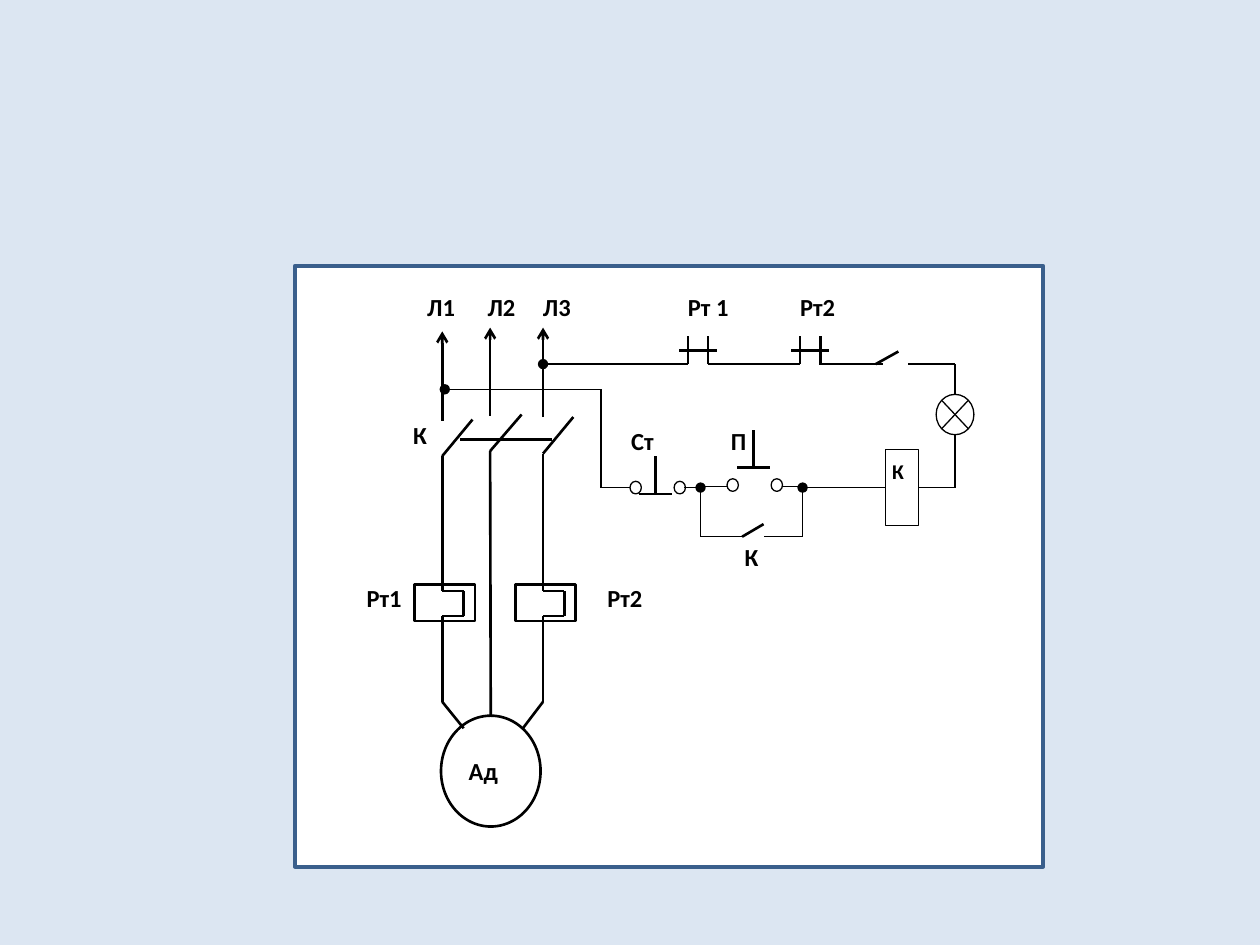
from lxml import etree
from pptx import Presentation
from pptx.dml.color import RGBColor
from pptx.enum.shapes import MSO_CONNECTOR, MSO_SHAPE
from pptx.enum.text import MSO_ANCHOR
from pptx.oxml.ns import qn
from pptx.util import Inches, Pt

STRAIGHT = MSO_CONNECTOR.STRAIGHT
RECT, OVAL = MSO_SHAPE.RECTANGLE, MSO_SHAPE.OVAL
LAMP = MSO_SHAPE.FLOWCHART_SUMMING_JUNCTION
TOP = MSO_ANCHOR.TOP
BLACK, WHITE, FRAME, BACKGROUND = "000000", "FFFFFF", "3A5F8C", "DCE6F2"
THIN, THICK = 0.75, 1.5


def color(value):
    return RGBColor.from_string(value)


def write(frame, text, size=14, bold=True, font="Calibri", ink=BLACK):
    paragraph = frame.paragraphs[0]
    paragraph.space_after = Pt(10)
    run = paragraph.add_run()
    run.text = text
    run.font.name, run.font.size, run.font.bold = font, Pt(size), bold
    run.font.color.rgb = color(ink)


class Schematic:
    def __init__(self, slide):
        self.slide = slide
        self.shapes = slide.shapes
        slide.background.fill.solid()
        slide.background.fill.fore_color.rgb = color(BACKGROUND)

    def block(self, kind, left, top, width, height, weight=THIN, ink=BLACK):
        shape = self.shapes.add_shape(
            kind, Inches(left), Inches(top), Inches(width), Inches(height))
        shape.shadow.inherit = False
        shape.fill.solid()
        shape.fill.fore_color.rgb = color(WHITE)
        shape.line.color.rgb = color(ink)
        shape.line.width = Pt(weight)
        return shape

    def line(self, start, end, weight=THIN, head=None, tail=None, end_at=None):
        """Draw from start to end; end_at is a (shape, site) to join."""
        line = self.shapes.add_connector(
            STRAIGHT, *(Inches(value) for value in (*start, *end)))
        if end_at:
            line.end_connect(*end_at)
        line.line.color.rgb = color(BLACK)
        line.line.width = Pt(weight)
        outline = line._element.spPr.find(qn("a:ln"))
        for tag, kind in (("a:headEnd", head), ("a:tailEnd", tail)):
            if kind:
                etree.SubElement(outline, qn(tag), type=kind)
        etree.SubElement(line._element.spPr, qn("a:effectLst"))

    def route(self, *points, weight=THIN):
        for start, end in zip(points, points[1:]):
            self.line(start, end, weight)

    def label(self, text, left, top, width=0.5, size=14):
        frame = self.shapes.add_textbox(
            Inches(left), Inches(top), Inches(width), Inches(0.3)).text_frame
        frame.word_wrap = True
        frame.vertical_anchor = TOP
        frame.margin_left = frame.margin_right = 0
        frame.margin_top = frame.margin_bottom = 0
        write(frame, text, size=size)

    def power_contact(self, x, arrow_y, gap_y, pivot_y, blade):
        self.line((x, gap_y), (x, arrow_y), THICK, tail="arrow")
        self.line((x, pivot_y), (x + blade, pivot_y - 0.29), THICK)

    def heater(self, x, pivot_y):
        """Thermal relay heater in one phase of the motor supply."""
        self.block(RECT, x - 0.22, 4.64, 0.48, 0.29, THICK)
        self.route((x, pivot_y), (x, 4.69), (x + 0.17, 4.69),
                   (x + 0.17, 4.89), (x, 4.89), (x, 5.57), weight=THICK)

    def thermal_contact(self, x, y):
        for post in (x, x + 0.16):
            self.line((post, y), (post, y - 0.22), THICK)
        self.line((x - 0.07, y - 0.11), (x + 0.23, y - 0.11), THICK)

    def push_button(self, left, y, plate_left, plate_y):
        for terminal in (left, left + 0.35):
            self.block(OVAL, terminal, y - 0.05, 0.09, 0.1)
        self.line((plate_left, plate_y), (plate_left + 0.26, plate_y), THICK)
        stem = plate_left + 0.13
        self.line((stem, plate_y), (stem, plate_y - 0.3), THICK)


def main():
    deck = Presentation()
    deck.slide_width, deck.slide_height = Inches(10), Inches(7.5)
    scheme = Schematic(deck.slides.add_slide(deck.slide_layouts[6]))
    scheme.block(RECT, 2.34, 2.11, 5.94, 4.77, weight=2, ink=FRAME)

    # Three-phase supply, contactor and motor
    phase1, phase2, phase3 = 3.51, 3.89, 4.31
    scheme.power_contact(phase1, 2.63, 3.34, 3.62, 0.24)
    scheme.power_contact(phase2, 2.6, 3.3, 3.58, 0.25)
    scheme.power_contact(phase3, 2.6, 3.31, 3.6, 0.24)
    scheme.line((3.65, 3.49), (4.38, 3.49), THICK)
    scheme.heater(phase1, 3.62)
    scheme.heater(phase3, 3.6)
    motor = scheme.block(OVAL, 3.5, 5.68, 0.79, 0.88, THICK)
    scheme.line((phase2, 3.58), (phase2, 5.68), THICK, end_at=(motor, 0))
    scheme.line((phase1, 5.57), (3.68, 5.78), THICK)
    scheme.line((phase3, 5.57), (4.15, 5.78), THICK)

    # Upper control line with the thermal relay contacts
    rail, right = 2.89, 7.58
    scheme.line((5.46, rail), (phase3, rail), tail="oval")
    for start, end in ((5.62, 6.35), (6.5, 7.01), (7.21, right)):
        scheme.line((start, rail), (end, rail))
    for x in (5.46, 6.35):
        scheme.thermal_contact(x, rail)
    scheme.line((6.95, rail), (7.13, rail - 0.1), THICK)

    # Lamp and contactor coil
    row = 3.87
    lamp = scheme.block(LAMP, 7.43, 3.13, 0.3, 0.32)
    coil = scheme.block(RECT, 7.03, 3.57, 0.26, 0.6)
    scheme.line((right, rail), (right, 3.13), end_at=(lamp, 0))
    scheme.line((right, row), (right, 3.45))
    scheme.line((right, row), (7.29, row), end_at=(coil, 3))

    # Stop and start buttons
    left_node, right_node = 5.56, 6.37
    scheme.line((3.53, 3.09), (4.77, 3.09), head="oval")
    scheme.route((4.77, 3.09), (4.77, row), (5, row))
    scheme.push_button(5, row, 5.07, 3.92)
    scheme.line((5.43, row), (left_node, row))
    scheme.line((left_node, 3.86), (5.77, 3.86))
    scheme.push_button(5.77, 3.85, 5.85, 3.71)
    scheme.line((6.21, 3.86), (right_node, 3.86))
    scheme.line((right_node, row), (7.03, row), end_at=(coil, 1))

    # Holding contact in parallel with the start button
    branch = 4.26
    for node, contact in ((left_node, 5.89), (right_node, 6.06)):
        scheme.line((node, row), (node, branch), head="oval")
        scheme.line((node, branch), (contact, branch))
    scheme.line((5.89, branch), (6.06, branch - 0.1), THICK)

    # Labels
    for text, left, top in (
            ("Л1", 3.39, 2.32), ("Л2", 3.87, 2.32), ("Л3", 4.31, 2.32),
            ("Рт 1", 5.46, 2.32), ("Рт2", 6.35, 2.32),
            ("К", 3.28, 3.33), ("Ст", 5.01, 3.38), ("П", 5.8, 3.38),
            ("К", 5.91, 4.3), ("Рт1", 2.91, 4.63), ("Рт2", 4.82, 4.63),
            ("Ад", 3.72, 6)):
        scheme.label(text, left, top)
    scheme.label("К", 7.08, 3.64, width=0.2, size=12)

    deck.save("out.pptx")


if __name__ == "__main__":
    main()
